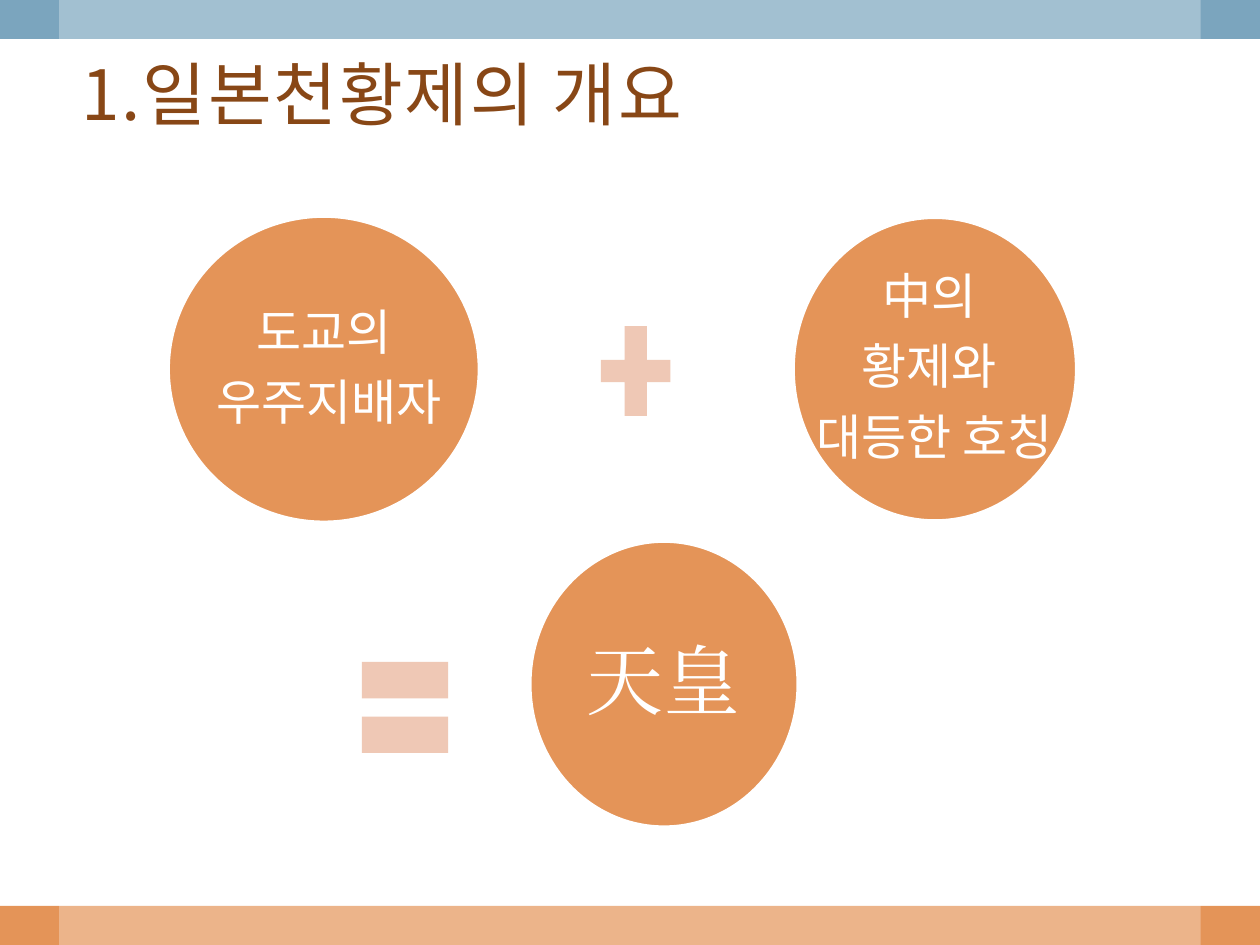
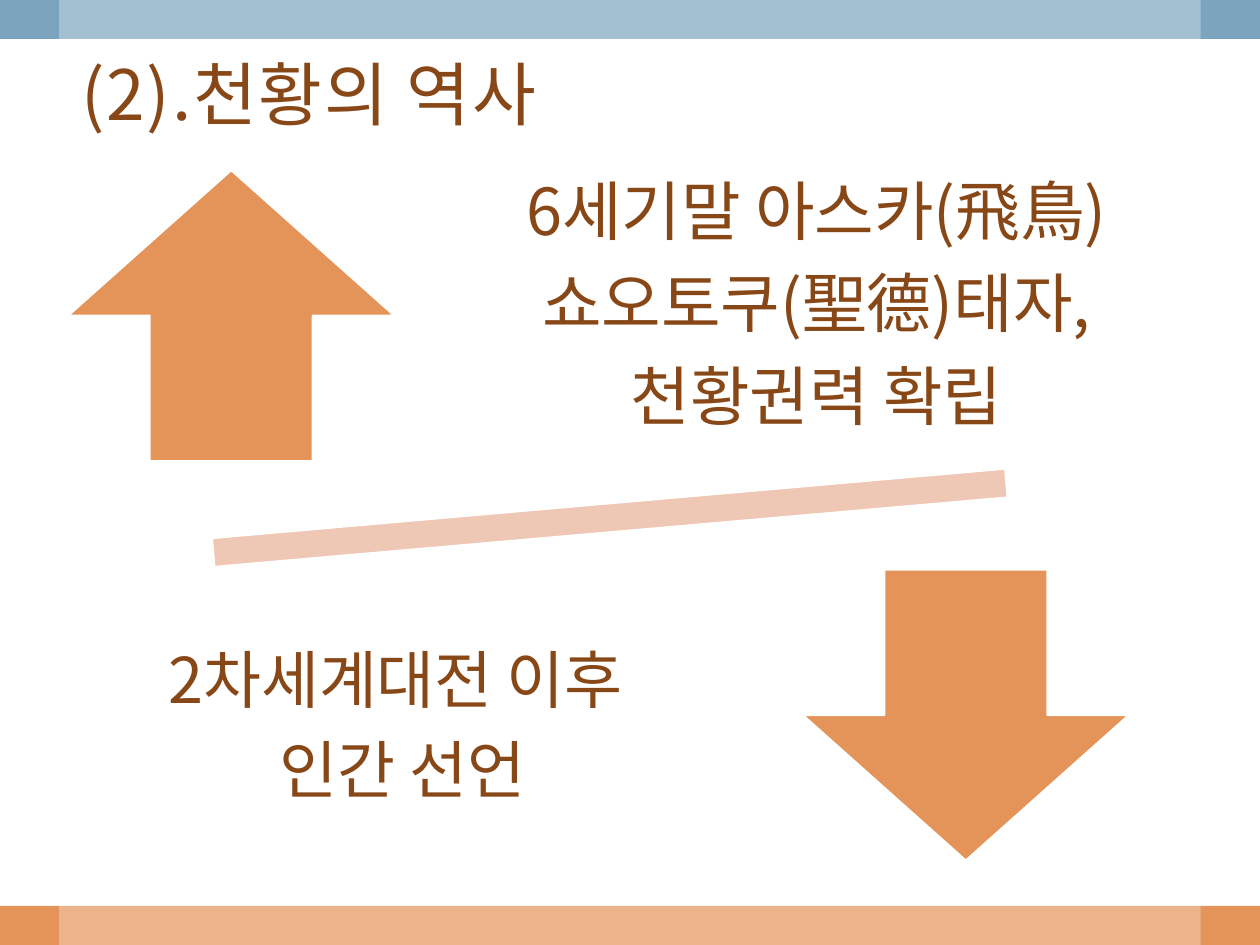
import pptx
import pptx.util
import pptx.dml.color
import pptx.enum.shapes
import pptx.enum.text
import pptx.oxml
import pptx.oxml.ns
import lxml.etree

Inches = pptx.util.Inches
RGBColor = pptx.dml.color.RGBColor
Shape = pptx.enum.shapes.MSO_SHAPE
Align = pptx.enum.text.PP_ALIGN
qn = pptx.oxml.ns.qn

# Shared look
ORANGE = RGBColor(0xE4, 0x94, 0x58)
BLUE = RGBColor(0x7B, 0xA5, 0xBE)
PEACH = RGBColor(0xEF, 0xC8, 0xB5)
BROWN = RGBColor(0x88, 0x47, 0x16)
WHITE = RGBColor(0xFF, 0xFF, 0xFF)
KOREAN_FONT = "Noto Sans CJK KR"
HANJA_FONT = "Cambria"
SLIDE_WIDTH, SLIDE_HEIGHT = 10, 7.5
BAND_HEIGHT = 0.31
SIDE_MARGIN = 0.47


def add_figure(slide, kind, box, fill, outlined=False):
    shape = slide.shapes.add_shape(kind, *map(Inches, box))
    shape.shadow.inherit = False
    shape.fill.solid()
    shape.fill.fore_color.rgb = fill
    if outlined:
        shape.line.color.rgb = WHITE
        shape.line.width = pptx.util.Pt(1.25)
    else:
        shape.line.fill.background()
    return shape


def set_font(run, size, color, font=KOREAN_FONT):
    run.font.size = pptx.util.Pt(size)
    run.font.color.rgb = color
    run.font.name = font
    lxml.etree.SubElement(run.font._element, qn("a:ea"), typeface=font)


def write_lines(shape, lines, size, color, inset, font=KOREAN_FONT, wrap=True):
    """Centre the lines, one paragraph each, with space after them."""
    frame = shape.text_frame
    frame.text = "\n".join(lines)
    frame.word_wrap = wrap
    frame.vertical_anchor = pptx.enum.text.MSO_ANCHOR.MIDDLE
    frame.margin_left = frame.margin_right = Inches(inset)
    frame.margin_top = frame.margin_bottom = Inches(inset)
    for paragraph in frame.paragraphs:
        paragraph.alignment = Align.CENTER
        paragraph.line_spacing = 0.9
        paragraph.space_after = pptx.util.Pt(0)
        space_after = paragraph._p.pPr.find(qn("a:spcAft"))
        space_after.remove(space_after[0])
        lxml.etree.SubElement(space_after, qn("a:spcPct"), val="35000")
        for run in paragraph.runs:
            set_font(run, size, color, font)


def add_circle(slide, box, lines, size=28, inset=0.04, font=KOREAN_FONT):
    circle = add_figure(slide, Shape.OVAL, box, ORANGE, outlined=True)
    write_lines(circle, lines, size, WHITE, inset, font, wrap=False)


def add_caption(slide, box, lines, size, inset):
    caption = slide.shapes.add_textbox(*map(Inches, box))
    write_lines(caption, lines, size, BROWN, inset)


def add_title(slide, text):
    title = slide.shapes.add_textbox(*map(Inches, (0.55, 0.34, 8.95, 0.8)))
    frame = title.text_frame
    frame.text = text
    frame.word_wrap = True
    frame.vertical_anchor = pptx.enum.text.MSO_ANCHOR.MIDDLE
    run = frame.paragraphs[0].runs[0]
    set_font(run, 39.6, BROWN)
    run.font._element.set("spc", "100")


def add_framed_slide(presentation, title):
    """Blank slide with the two bands, lightened between the margins."""
    slide = presentation.slides.add_slide(presentation.slide_layouts[6])
    for top, color in ((SLIDE_HEIGHT - BAND_HEIGHT, ORANGE), (0, BLUE)):
        add_figure(slide, Shape.RECTANGLE, (0, top, SLIDE_WIDTH, BAND_HEIGHT), color)
    veil_box = (SIDE_MARGIN, 0, SLIDE_WIDTH - 2 * SIDE_MARGIN, SLIDE_HEIGHT)
    veil = add_figure(slide, Shape.RECTANGLE, veil_box, WHITE)
    veil_color = veil._element.spPr.find(qn("a:solidFill"))[0]
    lxml.etree.SubElement(veil_color, qn("a:alpha"), val="30000")
    add_title(slide, title)
    return slide


def build_overview(presentation):
    slide = add_framed_slide(presentation, "1.일본천황제의 개요")
    # Two sources of the title
    add_circle(slide, (1.34, 1.72, 2.46, 2.42), ["도교의", " 우주지배자"])
    add_figure(slide, Shape.MATH_PLUS, (4.67, 2.46, 0.75, 0.97), PEACH)
    add_circle(slide, (6.3, 1.73, 2.24, 2.4), ["中의 ", "황제와 ", "대등한 호칭"])
    # Their sum
    add_figure(slide, Shape.MATH_EQUAL, (2.75, 5, 0.93, 1.23), PEACH)
    add_circle(slide, (4.21, 4.3, 2.12, 2.26), ["天皇"], 44, 0.06, HANJA_FONT)


def build_history(presentation):
    slide = add_framed_slide(presentation, "(2).천황의 역사")
    divider = add_figure(slide, Shape.MATH_MINUS, (0.54, 3.62, 8.6, 0.98), PEACH, True)
    divider.rotation = 355
    # Fall of imperial power
    add_figure(slide, Shape.DOWN_ARROW, (6.37, 4.52, 2.59, 2.31), ORANGE, True)
    add_caption(slide, (-0.11, 4.57, 6.61, 2.42),
                ["2차세계대전 이후 ", "인간 선언"], 36, 0.28)
    # Rise of imperial power
    add_figure(slide, Shape.UP_ARROW, (0.54, 1.35, 2.59, 2.31), ORANGE, True)
    add_caption(slide, (2.96, 0.97, 7.04, 2.93),
                ["6세기말 아스카(飛鳥)", "쇼오토쿠(聖德)태자,", "천황권력 확립"], 37, 0.29)


def main():
    presentation = pptx.Presentation()
    presentation.slide_width = Inches(SLIDE_WIDTH)
    presentation.slide_height = Inches(SLIDE_HEIGHT)
    build_overview(presentation)
    build_history(presentation)
    presentation.save("out.pptx")


if __name__ == "__main__":
    main()
